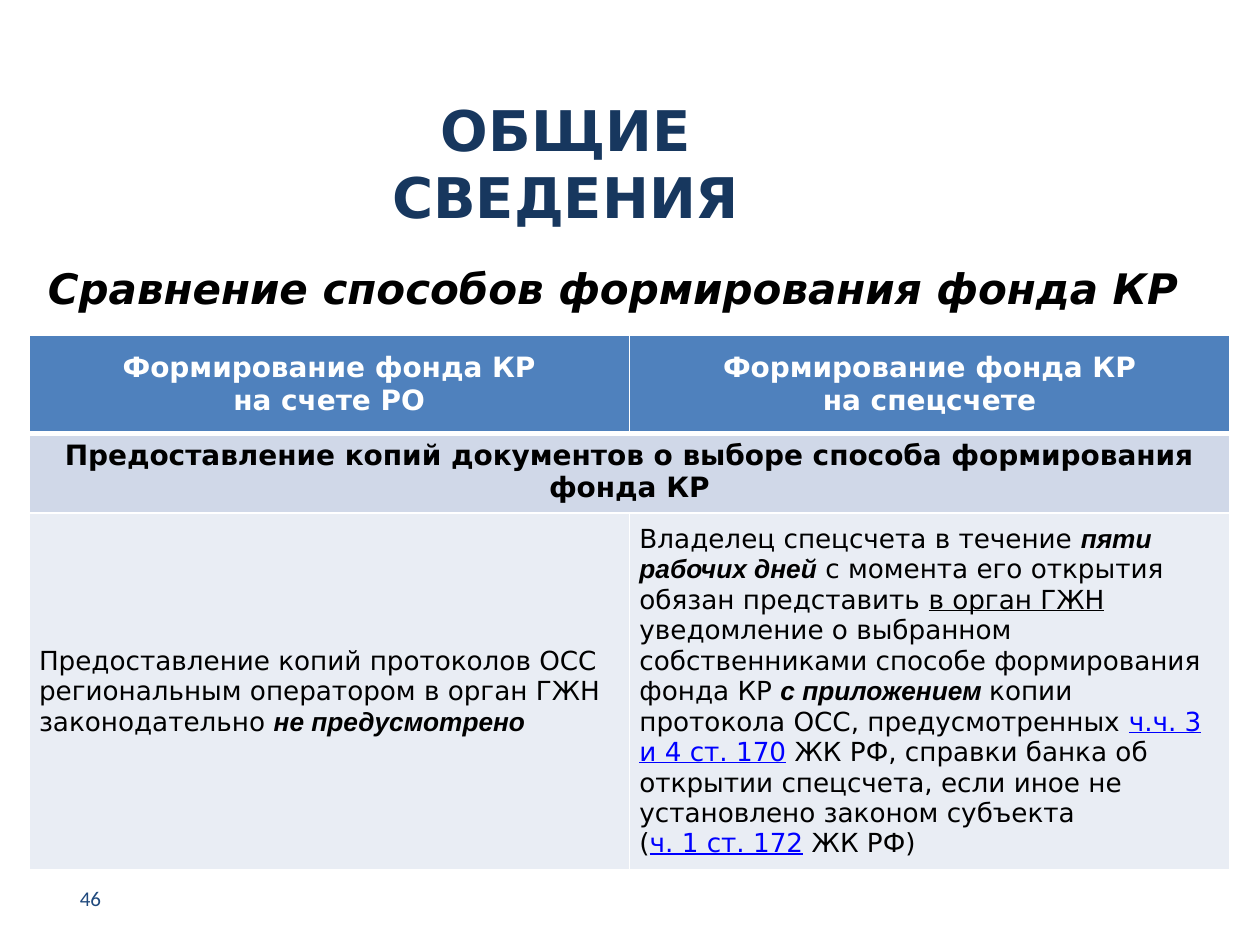
import lxml.etree
import pptx
import pptx.dml.color
import pptx.enum.text
import pptx.oxml.ns
import pptx.util

colour = pptx.dml.color.RGBColor.from_string
qn = pptx.oxml.ns.qn
Pt = pptx.util.Pt
ALIGN = pptx.enum.text.PP_ALIGN
MIDDLE = pptx.enum.text.MSO_ANCHOR.MIDDLE
MAIN_FONT = "DejaVu Sans"

deck = pptx.Presentation()
deck.slide_width = pptx.util.Inches(10)
deck.slide_height = pptx.util.Inches(7.5)
column, row = deck.slide_width // 100, deck.slide_height // 75
slide = deck.slides.add_slide(deck.slide_layouts[1])


def grid(left, top, width, height):
    """Turn grid columns and rows into slide lengths."""
    return (int(left * column), int(top * row),
            int(width * column), int(height * row))


def style(font, size, hex_colour, name=MAIN_FONT, bold=False, italic=False):
    font.size = Pt(size)
    font.name = name
    font.bold = bold
    font.italic = italic
    font.color.rgb = colour(hex_colour)


# Title and subtitle
title = slide.shapes.title
title.left, title.top, title.width, title.height = grid(24.2, 5.5, 41.4, 14.8)
title.text_frame.text = "ОБЩИЕ СВЕДЕНИЯ"
title.text_frame.vertical_anchor = MIDDLE
heading = title.text_frame.paragraphs[0]
heading.alignment = ALIGN.CENTER
style(heading.font, 32, "17375E", bold=True)

subtitle = slide.placeholders[1]
subtitle.left, subtitle.top, subtitle.width, subtitle.height = grid(2.8, 20.3, 95.7, 50)
subtitle.text_frame.text = "Сравнение способов формирования фонда КР"
subheading = subtitle.text_frame.paragraphs[0]
lxml.etree.SubElement(subheading._p.get_or_add_pPr(), qn("a:buNone"))
style(subheading.font, 24, "000000", bold=True, italic=True)

# Page number
page_number = slide.shapes.add_textbox(*grid(3.5, 69.3, 5.5, 4)).text_frame
page_number.word_wrap = True
page_number.vertical_anchor = MIDDLE
page_number.text = "46"
page_number.paragraphs[0].alignment = ALIGN.RIGHT
style(page_number.paragraphs[0].font, 12, "1F497D", "Calibri")

# Comparison table: each cell is a list of paragraphs, each paragraph a list of (text, look)
comparison = [
    [[[("Формирование фонда КР", "")], [("на счете РО", "")]],
     [[("Формирование фонда КР", "")], [("на спецсчете", "")]]],
    [[[("Предоставление копий документов о выборе способа формирования фонда КР", "")]], []],
    [[[("Предоставление копий протоколов ОСС региональным оператором в орган ГЖН "
        "законодательно ", ""),
       ("не предусмотрено", "strong")]],
     [[("Владелец спецсчета в течение ", ""),
       ("пяти рабочих дней", "strong"),
       (" с момента его открытия обязан представить ", ""),
       ("в орган ГЖН ", "underlined"),
       ("уведомление о выбранном собственниками способе формирования фонда КР ", ""),
       ("с приложением ", "strong"),
       ("копии протокола ОСС, предусмотренных ", ""),
       ("ч.ч. 3 и 4 ст. 170", "reference"),
       (" ЖК РФ, справки банка об открытии спецсчета, если иное не установлено "
        "законом субъекта", "")],
      [("(", ""),
       ("ч. 1 ст. 172", "reference"),
       (" ЖК РФ)", "")]]],
]
# Per row: height in grid rows, fill, text colour, size, bold, alignment
row_looks = [
    (7.8, "4F81BD", "FFFFFF", 16, True, ALIGN.CENTER),
    (4.7, "D0D8E8", "000000", 16, True, ALIGN.CENTER),
    (26.6, "E9EDF4", "000000", 15, False, ALIGN.LEFT),
]

table = slide.shapes.add_table(3, 2, *grid(2.3, 26.6, 95.3, 39.1)).table
table.cell(1, 0).merge(table.cell(1, 1))

for r, (height, fill, text_colour, size, bold, alignment) in enumerate(row_looks):
    table.rows[r].height = int(height * row)
    for c, paragraphs in enumerate(comparison[r]):
        cell = table.cell(r, c)
        cell.fill.solid()
        cell.fill.fore_color.rgb = colour(fill)
        if r != 1:
            cell.vertical_anchor = MIDDLE
            cell.margin_left = cell.margin_right = pptx.util.Inches(0.08)
            cell.margin_top = cell.margin_bottom = pptx.util.Inches(0.04)

        border_widths = {"L": 1, "R": 1, "T": 3 if r == 1 else 1, "B": 3 if r == 0 else 1}
        properties = cell._tc.get_or_add_tcPr()
        for position, (side, width) in enumerate(border_widths.items()):
            line = lxml.etree.Element(qn(f"a:ln{side}"), w=str(Pt(width)))
            solid = lxml.etree.SubElement(line, qn("a:solidFill"))
            lxml.etree.SubElement(solid, qn("a:srgbClr"), val="FFFFFF")
            properties.insert(position, line)

        for p, pieces in enumerate(paragraphs):
            frame = cell.text_frame
            paragraph = frame.add_paragraph() if p else frame.paragraphs[0]
            paragraph.alignment = alignment
            mixed = any(look for _, look in pieces)
            if not mixed:
                style(paragraph.font, size, text_colour, bold=bold)
            for text, look in pieces:
                run = paragraph.add_run()
                run.text = text
                if mixed:
                    strong = look == "strong"
                    style(run.font, size,
                          "0000FF" if look == "reference" else text_colour,
                          "Arial" if strong else MAIN_FONT, strong, strong)
                if look in ("underlined", "reference"):
                    run.font.underline = True

deck.save("out.pptx")
